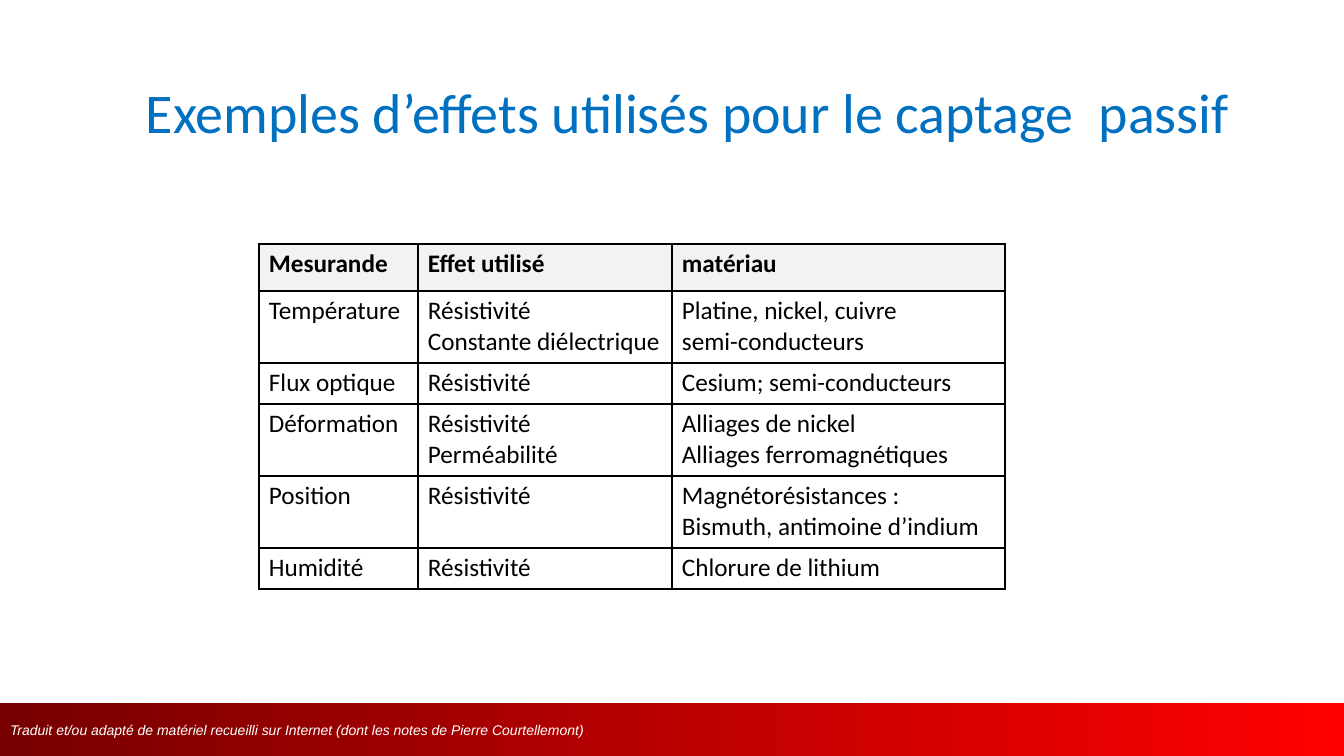
from lxml import etree
from pptx import Presentation
from pptx import util as u
from pptx.dml.color import RGBColor
from pptx.enum import shapes, text
from pptx.oxml.ns import qn

# Content
TITLE = "Exemples d’effets utilisés pour le captage  passif"
FOOTER = ("Traduit et/ou adapté de matériel recueilli sur Internet "
          "(dont les notes de Pierre Courtellemont)")
ROWS = [
    (["Mesurande"], ["Effet utilisé"], ["matériau"]),
    (["Température"], ["Résistivité", "Constante diélectrique"],
     ["Platine, nickel, cuivre", "semi-conducteurs"]),
    (["Flux optique"], ["Résistivité"], ["Cesium; semi-conducteurs"]),
    (["Déformation"], ["Résistivité", "Perméabilité"],
     ["Alliages de nickel", "Alliages ferromagnétiques"]),
    (["Position"], ["Résistivité"],
     ["Magnétorésistances :", "Bismuth, antimoine d’indium"]),
    (["Humidité"], ["Résistivité"], ["Chlorure de lithium"]),
]

# Measures in px
WIDTH, HEIGHT = 1344, 756
TITLE_BOX = (116, 52, 1143, 126)
FOOTER_BOX = (0, 703, WIDTH, HEIGHT - 703)
TABLE_LEFT, TABLE_TOP = 259, 244
COLUMN_WIDTHS = [159, 254, 333]
HEADER_HEIGHT, LINE_HEIGHT = 47, 31
PAD_X, PAD_Y, INDENT = 10, 5, 38

# Colours
BLACK = RGBColor(0x00, 0x00, 0x00)
WHITE = RGBColor(0xFF, 0xFF, 0xFF)
BLUE = RGBColor(0x00, 0x70, 0xC0)
PALE_GREY = RGBColor(0xF2, 0xF2, 0xF2)
DARK_RED = RGBColor(0x76, 0x00, 0x00)
RED = RGBColor(0xFF, 0x00, 0x00)


def px(length):
    return u.Emu(round(length * 914400 / 100.8))


def add_span(para, words, font, size, colour, bold=False, italic=False):
    span = para.add_run()
    span.text = words
    span.font.name = font
    span.font.size = u.Pt(size)
    span.font.color.rgb = colour
    span.font.bold = bold
    span.font.italic = italic


def add_borders(cell):
    properties = cell._tc.get_or_add_tcPr()
    for position, side in enumerate(("lnL", "lnR", "lnT", "lnB")):
        line = etree.Element(qn("a:" + side), w=str(u.Pt(1)))
        fill = etree.SubElement(line, qn("a:solidFill"))
        etree.SubElement(fill, qn("a:srgbClr"), val=str(BLACK))
        properties.insert(position, line)


def fill_cell(cell, lines, header):
    cell.fill.solid()
    cell.fill.fore_color.rgb = PALE_GREY if header else WHITE
    cell.margin_left = cell.margin_right = px(PAD_X)
    cell.margin_top = cell.margin_bottom = px(PAD_Y)
    frame = cell.text_frame
    for number, words in enumerate(lines):
        para = frame.add_paragraph() if number else frame.paragraphs[0]
        indents = para._p.get_or_add_pPr()
        indents.set("marL", str(px(INDENT)))
        indents.set("indent", str(-px(INDENT)))
        add_span(para, words, "Calibri", 18, BLACK, bold=header)
    add_borders(cell)


def main():
    deck = Presentation()
    deck.slide_width, deck.slide_height = px(WIDTH), px(HEIGHT)
    page = deck.slides.add_slide(deck.slide_layouts[6])

    # Footer band
    band = page.shapes.add_shape(shapes.MSO_SHAPE.RECTANGLE, *map(px, FOOTER_BOX))
    band.shadow.inherit = False
    band.line.fill.background()
    band.fill.gradient()
    band.fill.gradient_angle = 0
    for stop, colour, place in zip(band.fill.gradient_stops, (DARK_RED, RED), (0, 1)):
        stop.color.rgb = colour
        stop.position = place
    frame = band.text_frame
    frame.word_wrap = True
    frame.vertical_anchor = text.MSO_ANCHOR.MIDDLE
    frame.margin_left = px(PAD_X)
    para = frame.paragraphs[0]
    para.alignment = text.PP_ALIGN.LEFT
    add_span(para, FOOTER, "Arial", 10, WHITE, italic=True)

    # Title
    box = page.shapes.add_textbox(*map(px, TITLE_BOX))
    frame = box.text_frame
    frame.word_wrap = True
    frame.vertical_anchor = text.MSO_ANCHOR.MIDDLE
    para = frame.paragraphs[0]
    para.alignment = text.PP_ALIGN.CENTER
    para.line_spacing = 0.9
    add_span(para, TITLE, "Calibri", 40, BLUE)

    # Table: each row is as tall as its longest cell
    heights = [HEADER_HEIGHT] + [
        2 * PAD_Y + LINE_HEIGHT * max(map(len, row)) for row in ROWS[1:]]
    table = page.shapes.add_table(
        len(ROWS), len(COLUMN_WIDTHS), px(TABLE_LEFT), px(TABLE_TOP),
        px(sum(COLUMN_WIDTHS)), px(sum(heights))).table
    table.horz_banding = False
    for column, width in zip(table.columns, COLUMN_WIDTHS):
        column.width = px(width)
    for row_number, (row, height) in enumerate(zip(ROWS, heights)):
        table.rows[row_number].height = px(height)
        for column_number, lines in enumerate(row):
            fill_cell(table.cell(row_number, column_number), lines, row_number == 0)

    deck.save("out.pptx")


if __name__ == "__main__":
    main()
